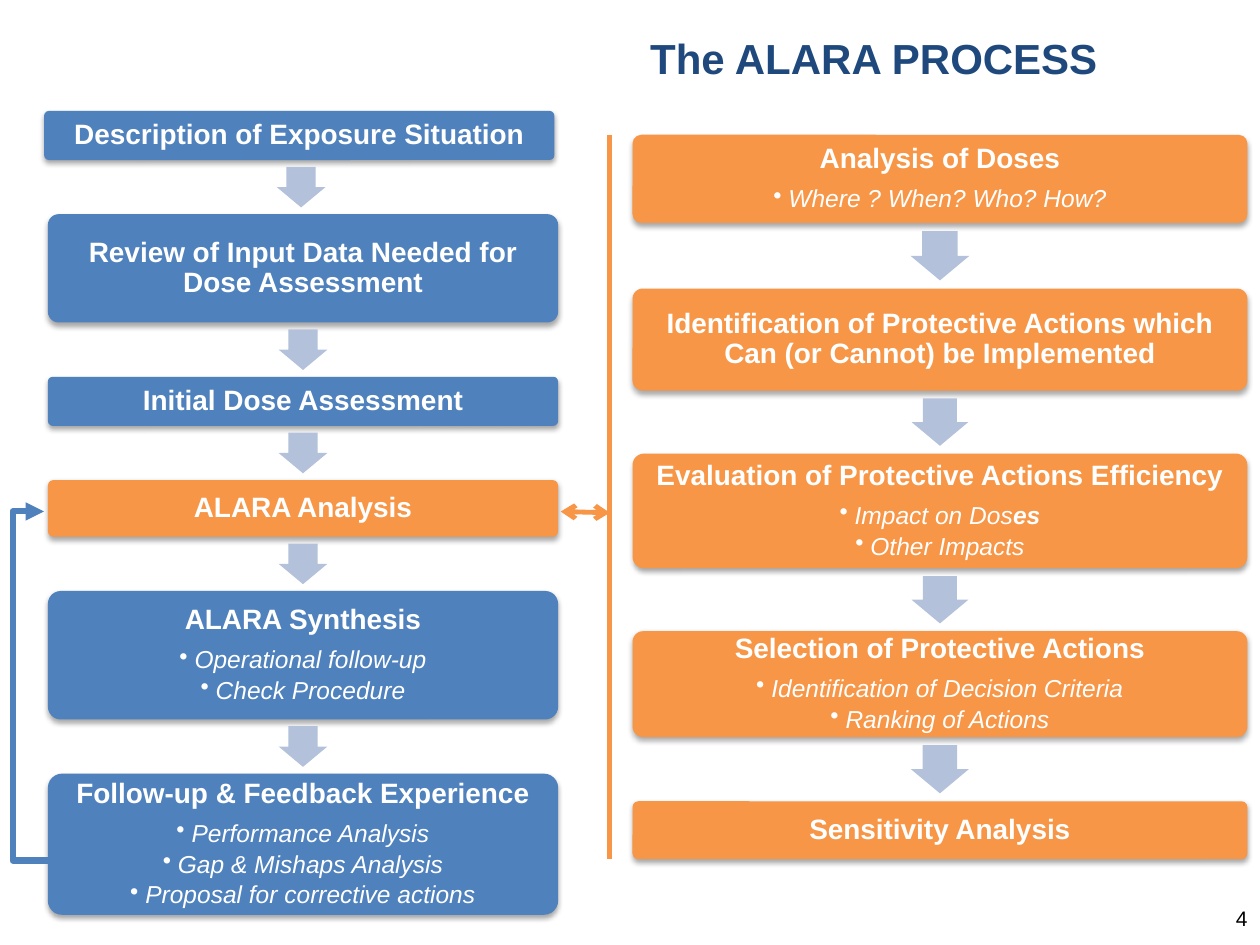
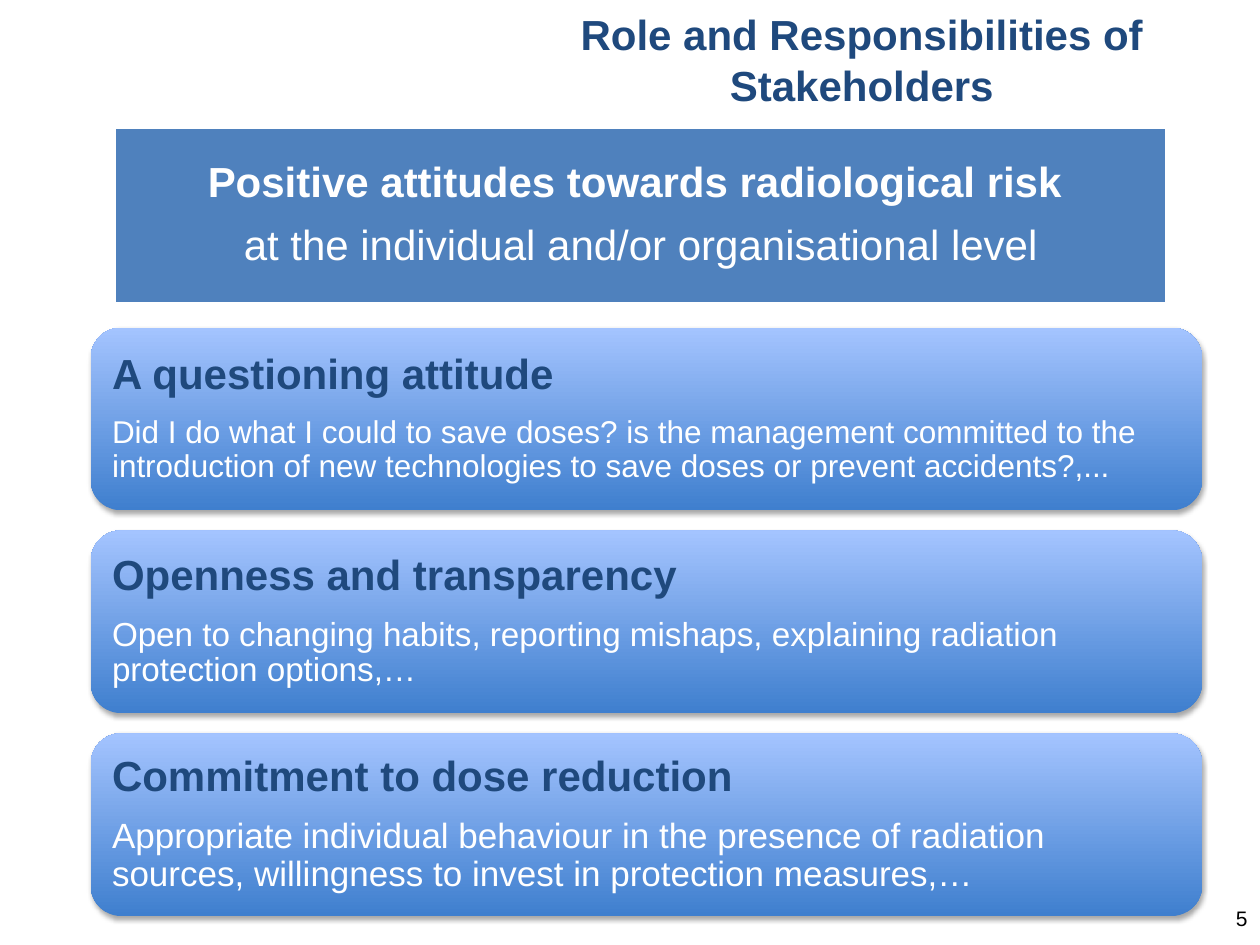
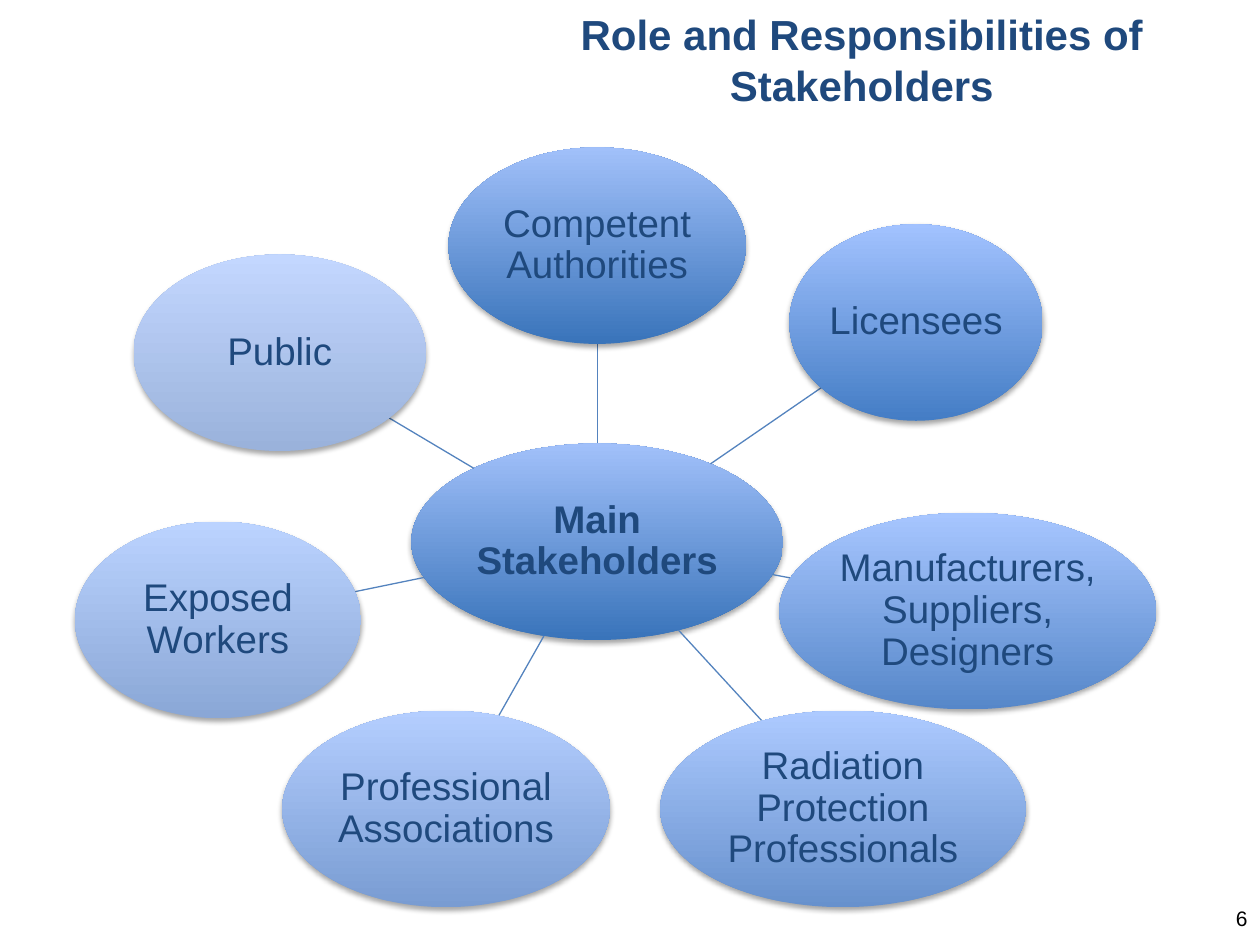
from math import hypot

from lxml.etree import SubElement
from pptx import Presentation
from pptx.dml.color import RGBColor
from pptx.enum.shapes import MSO_CONNECTOR, MSO_SHAPE
from pptx.enum.text import MSO_ANCHOR, MSO_AUTO_SIZE, PP_ALIGN
from pptx.oxml.ns import qn
from pptx.util import Inches, Pt

FONT = "Arial"
NAVY, BLUE, ORANGE, WHITE, BLACK = "1F497D", "4F81BD", "F79646", "FFFFFF", "000000"
ARROW_BLUE, SPOKE_BLUE = "B3C1DB", "5483BE"
TITLE_PLACE = (3.71, 0, 6.26, 0.94)
STAKEHOLDER_TITLE = "Role and Responsibilities of Stakeholders"

MAIN_STEPS = [
    (0.35, 0.88, 0.39, BLUE, "Description of Exposure Situation", []),
    (0.38, 1.7, 0.86, BLUE, "Review of Input Data Needed for Dose Assessment", []),
    (0.38, 2.99, 0.39, BLUE, "Initial Dose Assessment", []),
    (0.38, 3.81, 0.45, ORANGE, "ALARA Analysis", []),
    (0.38, 4.69, 1.02, BLUE, "ALARA Synthesis",
     [["Operational follow-up"], ["Check Procedure"]]),
    (0.38, 6.14, 1.12, BLUE, "Follow-up & Feedback Experience",
     [["Performance Analysis"], ["Gap & Mishaps Analysis"],
      ["Proposal for corrective actions"]]),
]
ANALYSIS_STEPS = [
    (5.02, 1.07, 0.7, ORANGE, "Analysis of Doses", [["Where ? When? Who? How?"]]),
    (5.02, 2.29, 0.81, ORANGE,
     "Identification of Protective Actions which Can (or Cannot) be Implemented", []),
    (5.02, 3.6, 0.91, ORANGE, "Evaluation of Protective Actions Efficiency",
     [["Impact on Dos", "es"], ["Other Impacts"]]),
    (5.02, 5.01, 0.84, ORANGE, "Selection of Protective Actions",
     [["Identification of Decision Criteria"], ["Ranking of Actions"]]),
    (5.02, 6.36, 0.46, ORANGE, "Sensitivity Analysis", []),
]
ATTITUDES = [
    ("A questioning attitude", 18,
     "Did I do what I could to save doses? is the management committed to the "
     "introduction of new technologies to save doses or prevent accidents?,..."),
    ("Openness and transparency", 19,
     "Open to changing habits, reporting mishaps, explaining radiation "
     "protection options,…"),
    ("Commitment to dose reduction", 20,
     "Appropriate individual behaviour in the presence of radiation sources, "
     "willingness to invest in protection measures,…"),
]
HUB = (4.74, 4.3, 2.95, "Main Stakeholders", "3974BA", "A1C0FA")
STAKEHOLDERS = [
    (4.74, 1.95, 2.36, "Competent Authorities", "3974BA", "A1C0FA"),
    (7.27, 2.56, 2.01, "Licensees", "447DC5", "A2C2FF"),
    (7.68, 4.85, 2.99, "Manufacturers, Suppliers, Designers", "5687C9", "A7C6FF"),
    (6.69, 6.42, 2.9, "Radiation Protection Professionals", "6791CD", "ADCAFF"),
    (3.54, 6.42, 2.6, "Professional Associations", "799CD2", "B4CEFF"),
    (1.73, 4.92, 2.27, "Exposed Workers", "8AA7D6", "BBD3FF"),
    (2.22, 2.8, 2.32, "Public", "9AB2DB", "C3D7FF"),
]
OVAL_HEIGHT = 1.56


def rgb(code):
    """Turn a hex string into a colour."""
    return RGBColor.from_string(code)


def add_span(para, text, size, color, bold=False, italic=False):
    """Add one formatted run to a paragraph."""
    span = para.add_run()
    span.text = text
    font = span.font
    font.name, font.size, font.bold, font.italic = FONT, Pt(size), bold, italic
    font.color.rgb = rgb(color)


def add_para(frame, first=False, align=PP_ALIGN.CENTER, after=0):
    """Open the first paragraph of a frame or a further one, tightly leaded."""
    para = frame.paragraphs[0] if first else frame.add_paragraph()
    para.alignment = align
    para.line_spacing = 0.9
    para.space_after = Pt(after)
    return para


def add_bullet(para):
    """Give a paragraph a hanging bullet."""
    para.level = 1
    properties = para._p.get_or_add_pPr()
    properties.set("marL", str(Inches(0.12)))
    properties.set("indent", str(-Inches(0.12)))
    SubElement(properties, qn("a:buChar")).set("char", "•")


def prepare_frame(shape, margin):
    """Wrap the text of a shape, centre it vertically and return its frame."""
    frame = shape.text_frame
    frame.word_wrap = True
    frame.auto_size = MSO_AUTO_SIZE.NONE
    frame.vertical_anchor = MSO_ANCHOR.MIDDLE
    frame.margin_left = frame.margin_right = Inches(margin)
    frame.margin_top = frame.margin_bottom = Inches(margin)
    return frame


def add_block(page, kind, place, color, margin=0.0):
    """Add a borderless preset shape with a plain fill."""
    shape = page.shapes.add_shape(kind, *map(Inches, place))
    shape.shadow.inherit = False
    shape.fill.solid()
    shape.fill.fore_color.rgb = rgb(color)
    shape.line.fill.background()
    prepare_frame(shape, margin)
    return shape


def add_shadow(shape):
    """Drop a soft shadow below a shape."""
    effects = shape.element.spPr.find(qn("a:effectLst"))
    shadow = SubElement(effects, qn("a:outerShdw"), blurRad=str(Pt(3.1)),
                        dist=str(Pt(1.8)), dir="5400000", rotWithShape="0")
    color = SubElement(shadow, qn("a:srgbClr"), val=BLACK)
    SubElement(color, qn("a:alpha"), val="35000")


def add_gradient(shape, bottom, top):
    """Fill a shape with a vertical gradient."""
    shape.fill.gradient()
    shape.fill.gradient_angle = 90
    for stop, position, color in zip(shape.fill.gradient_stops, (0, 1), (bottom, top)):
        stop.position = position
        stop.color.rgb = rgb(color)


def add_line(page, start, end, color, width, kind=MSO_CONNECTOR.STRAIGHT,
             head=None, tail=None):
    """Add a connector without shadow, with arrowheads where named."""
    line = page.shapes.add_connector(kind, *map(Inches, (*start, *end)))
    line.line.color.rgb = rgb(color)
    line.line.width = Pt(width)
    properties = line.element.spPr
    outline = properties.find(qn("a:ln"))
    for tag, arrow in (("a:headEnd", head), ("a:tailEnd", tail)):
        if arrow:
            SubElement(outline, qn(tag), type=arrow)
    SubElement(properties, qn("a:effectLst"))
    return line


def add_page(deck, title, number, place=TITLE_PLACE):
    """Add a titled page with its page number."""
    page = deck.slides.add_slide(deck.slide_layouts[5])
    box = page.shapes.title
    box.left, box.top, box.width, box.height = map(Inches, place)
    para = prepare_frame(box, 0.05).paragraphs[0]
    para.alignment = PP_ALIGN.CENTER
    add_span(para, title, 24, NAVY, bold=True)
    corner = page.shapes.add_textbox(*map(Inches, (9.49, 7.14, 0.51, 0.34)))
    corner.text_frame.word_wrap = True
    para = corner.text_frame.paragraphs[0]
    para.alignment = PP_ALIGN.RIGHT
    add_span(para, str(number), 12, BLACK)
    return page


def add_step(page, place, color, heading, bullets):
    """Add a process step with a heading and bulleted details."""
    box = add_block(page, MSO_SHAPE.ROUNDED_RECTANGLE, place, color, 0.07)
    box.adjustments[0] = 0.1
    add_shadow(box)
    para = add_para(box.text_frame, first=True, after=6.7)
    add_span(para, heading, 16, WHITE, bold=True)
    for pieces in bullets:
        para = add_para(box.text_frame, after=2.5)
        add_bullet(para)
        for index, piece in enumerate(pieces):
            add_span(para, piece, 14, WHITE, bold=index > 0, italic=True)


def add_flow(page, steps, width):
    """Stack process steps with a down arrow in each gap."""
    for left, top, height, color, heading, bullets in steps:
        add_step(page, (left, top, width, height), color, heading, bullets)
    for upper, lower in zip(steps, steps[1:]):
        bottom = upper[1] + upper[2]
        gap = lower[1] - bottom
        center = (upper[0] + lower[0] + width) / 2
        place = (center - 0.45 * gap, bottom + gap / 8, 0.9 * gap, 0.75 * gap)
        arrow = add_block(page, MSO_SHAPE.DOWN_ARROW, place, ARROW_BLUE)
        arrow.adjustments[0], arrow.adjustments[1] = 0.6, 0.5


def add_attitude(page, top, heading, size, text):
    """Add a gradient card with a heading and a description."""
    card = add_block(page, MSO_SHAPE.ROUNDED_RECTANGLE, (0.72, top, 8.82, 1.45), BLUE, 0.1)
    add_gradient(card, "3F7FCE", "A4C4FF")
    add_shadow(card)
    para = add_para(card.text_frame, first=True, align=PP_ALIGN.LEFT, after=10)
    add_span(para, heading, 24, NAVY, bold=True)
    para = add_para(card.text_frame, align=PP_ALIGN.LEFT, after=0.42 * size)
    add_span(para, text, size, WHITE)


def add_oval(page, oval, bold=False):
    """Add a stakeholder oval around its centre."""
    x, y, width, name, bottom, top = oval
    place = (x - width / 2, y - OVAL_HEIGHT / 2, width, OVAL_HEIGHT)
    shape = add_block(page, MSO_SHAPE.OVAL, place, bottom, 0.02)
    add_gradient(shape, bottom, top)
    add_shadow(shape)
    para = add_para(shape.text_frame, first=True, after=9)
    add_span(para, name, 22, NAVY, bold=bold)


def rim_point(oval, target):
    """Find where the line from an oval's centre to a target leaves the oval."""
    dx, dy = target[0] - oval[0], target[1] - oval[1]
    reach = 1 / hypot(dx / (oval[2] / 2), dy / (OVAL_HEIGHT / 2))
    return oval[0] + dx * reach, oval[1] + dy * reach


def build_process(deck):
    """Build the page with the two linked flows."""
    page = add_page(deck, "The ALARA PROCESS", 4, (4.06, 0.21, 5.75, 0.5))
    add_flow(page, MAIN_STEPS, 4.05)
    add_flow(page, ANALYSIS_STEPS, 4.88)
    add_line(page, (4.84, 1.07), (4.84, 6.82), ORANGE, 3)
    add_line(page, (4.45, 4.06), (4.84, 4.07), ORANGE, 2.75, head="arrow", tail="arrow")
    feedback = add_line(page, (0.38, 6.83), (0.35, 4.06), BLUE, 3.5,
                        MSO_CONNECTOR.ELBOW, tail="triangle")
    guides = feedback.element.spPr.find(qn("a:prstGeom")).find(qn("a:avLst"))
    SubElement(guides, qn("a:gd"), name="adj1", fmla="val 933333")


def build_attitudes(deck):
    """Build the page with the banner and the attitude cards."""
    page = add_page(deck, STAKEHOLDER_TITLE, 5)
    for index, attitude in enumerate(ATTITUDES):
        add_attitude(page, 2.6 + 1.61 * index, *attitude)
    banner = add_block(page, MSO_SHAPE.RECTANGLE, (0.91, 1.01, 8.35, 1.4), BLUE, 0.1)
    banner.line.color.rgb = rgb(WHITE)
    banner.line.width = Pt(2)
    para = add_para(banner.text_frame, first=True, after=10)
    add_span(para, "Positive attitudes towards radiological risk ", 24, WHITE, bold=True)
    para = add_para(banner.text_frame, after=10)
    add_span(para, "at the individual and/or organisational level", 24, WHITE)


def build_stakeholders(deck):
    """Build the page with the stakeholders around their hub."""
    page = add_page(deck, STAKEHOLDER_TITLE, 6)
    add_oval(page, HUB, bold=True)
    for oval in STAKEHOLDERS:
        add_line(page, rim_point(HUB, oval), rim_point(oval, HUB), SPOKE_BLUE, 0.75)
        add_oval(page, oval)


def main():
    """Build and save the deck."""
    deck = Presentation()
    deck.slide_width, deck.slide_height = Inches(10), Inches(7.5)
    build_process(deck)
    build_attitudes(deck)
    build_stakeholders(deck)
    deck.save("out.pptx")


if __name__ == "__main__":
    main()
